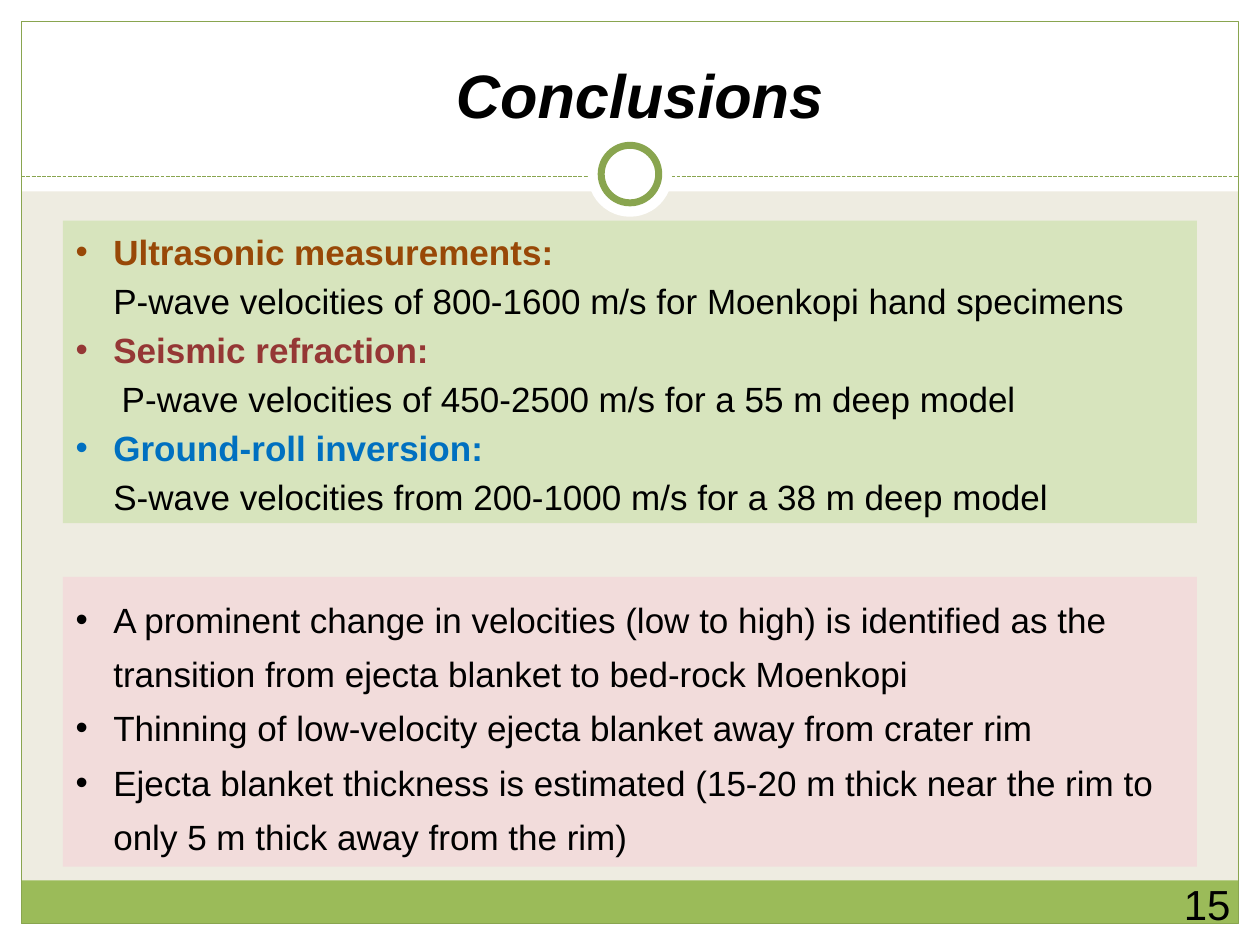
from dataclasses import dataclass
from typing import Optional

from lxml.etree import SubElement
from pptx import Presentation
from pptx.dml.color import RGBColor
from pptx.enum.dml import MSO_LINE_DASH_STYLE as Dash
from pptx.enum.shapes import MSO_CONNECTOR, MSO_SHAPE
from pptx.enum.text import MSO_ANCHOR, MSO_AUTO_SIZE, PP_ALIGN
from pptx.oxml.ns import qn
from pptx.util import Cm, Pt

BLACK = RGBColor(0x00, 0x00, 0x00)
WHITE = RGBColor(0xFF, 0xFF, 0xFF)
CREAM = RGBColor(0xEE, 0xEC, 0xE1)
GREEN = RGBColor(0x9B, 0xBB, 0x59)
DARK_GREEN = RGBColor(0x89, 0xA5, 0x4F)
PALE_GREEN = RGBColor(0xD7, 0xE4, 0xBD)
PALE_PINK = RGBColor(0xF2, 0xDC, 0xDB)
BROWN = RGBColor(0x98, 0x48, 0x07)
RED = RGBColor(0x95, 0x37, 0x35)
BLUE = RGBColor(0x00, 0x70, 0xC0)

WIDTH, HEIGHT = 25.4, 19.05
MARGIN = 0.43
INNER_WIDTH = WIDTH - 2 * MARGIN
CENTER = WIDTH / 2
TWO_CONTENT = 3
RECT, OVAL = MSO_SHAPE.RECTANGLE, MSO_SHAPE.OVAL


@dataclass(frozen=True)
class Box:
    left: float
    top: float
    width: float
    height: float


@dataclass(frozen=True)
class Block:
    box: Box
    kind: MSO_SHAPE = RECT
    fill: Optional[RGBColor] = None
    line: Optional[RGBColor] = None
    weight: float = 0.75


@dataclass(frozen=True)
class Line:
    text: str
    bulleted: bool = False
    heading_color: Optional[RGBColor] = None
    indent: float = 0.76


@dataclass(frozen=True)
class Panel:
    background: Block
    text_box: Box
    space_after: float
    lines: tuple[Line, ...]


FRAME = (
    Block(Box(0, HEIGHT - MARGIN, WIDTH, MARGIN), fill=WHITE),
    Block(Box(0, 0, WIDTH, 3.86), fill=WHITE),
    Block(Box(0, 0, MARGIN, HEIGHT), fill=WHITE),
    Block(Box(WIDTH - MARGIN, 0, MARGIN, HEIGHT), fill=WHITE),
    Block(Box(MARGIN, 17.75, INNER_WIDTH, 0.87), fill=GREEN),
    Block(Box(MARGIN, MARGIN, INNER_WIDTH, HEIGHT - 2 * MARGIN), line=DARK_GREEN),
)
RING = (
    Block(Box(CENTER - 0.85, 2.67, 1.7, 1.7), OVAL, WHITE),
    Block(Box(CENTER - 0.58, 2.93, 1.16, 1.16), OVAL, WHITE, DARK_GREEN, 4),
)
PANELS = (
    Panel(
        Block(Box(1.27, 4.45, 22.86, 6.1), fill=PALE_GREEN),
        Box(1.27, 4.45, 22.02, 5.92),
        4,
        (
            Line("Ultrasonic measurements:", True, BROWN),
            Line("P-wave velocities of 800-1600 m/s for Moenkopi hand specimens"),
            Line("Seismic refraction:", True, RED),
            Line("P-wave velocities of 450-2500 m/s for a 55 m deep model", indent=0.93),
            Line("Ground-roll inversion:", True, BLUE),
            Line("S-wave velocities from 200-1000 m/s for a 38 m deep model"),
        ),
    ),
    Panel(
        Block(Box(1.27, 11.63, 22.86, 5.84), fill=PALE_PINK),
        Box(1.27, 11.86, 22.66, 6.38),
        7,
        (
            Line("A prominent change in velocities (low to high) is identified as the", True),
            Line("transition from ejecta blanket to bed-rock Moenkopi"),
            Line("Thinning of low-velocity ejecta blanket away from crater rim", True),
            Line("Ejecta blanket thickness is estimated (15-20 m thick near the rim to", True),
            Line("only 5 m thick away from the rim)"),
        ),
    ),
)


def lengths(box: Box) -> tuple[Cm, ...]:
    return tuple(Cm(value) for value in (box.left, box.top, box.width, box.height))


def place(shape, box: Box) -> None:
    shape.left, shape.top, shape.width, shape.height = lengths(box)


def set_all(target, formats: dict) -> None:
    for name, value in formats.items():
        setattr(target, name, value)


def format_font(font, size: float, color: RGBColor = BLACK, **styles: bool) -> None:
    set_all(font, {"name": "Arial", "size": Pt(size), **styles})
    font.color.rgb = color


def draw_block(slide, block: Block) -> None:
    shape = slide.shapes.add_shape(block.kind, *lengths(block.box))
    shape.shadow.inherit = False
    if block.fill is None:
        shape.fill.background()
    else:
        shape.fill.solid()
        shape.fill.fore_color.rgb = block.fill
    if block.line is None:
        shape.line.fill.background()
    else:
        shape.line.color.rgb = block.line
        shape.line.width = Pt(block.weight)


def draw_divider(slide) -> None:
    y = Cm(3.56)
    divider = slide.shapes.add_connector(
        MSO_CONNECTOR.STRAIGHT, Cm(MARGIN), y, Cm(WIDTH - MARGIN), y)
    set_all(divider.line, {"width": Pt(0.75), "dash_style": Dash.SQUARE_DOT})
    divider.line.color.rgb = DARK_GREEN
    SubElement(divider.element.spPr, qn("a:effectLst"))


def set_bullet(paragraph, line: Line) -> None:
    properties = paragraph._p.get_or_add_pPr()
    properties.set("marL", str(Cm(line.indent)))
    properties.set("indent", str(-Cm(line.indent) if line.bulleted else 0))
    if line.bulleted:
        SubElement(properties, qn("a:buFont"), typeface="Arial")
        SubElement(properties, qn("a:buChar"), char="•")
    else:
        SubElement(properties, qn("a:buNone"))


def bring_to_front(slide, shape) -> None:
    slide.shapes.element.append(shape.element)


def draw_panel(slide, placeholder, panel: Panel) -> None:
    draw_block(slide, panel.background)
    bring_to_front(slide, placeholder)
    place(placeholder, panel.text_box)
    frame = placeholder.text_frame
    set_all(frame, {"word_wrap": True, "auto_size": MSO_AUTO_SIZE.NONE,
                    "vertical_anchor": MSO_ANCHOR.TOP, "margin_top": Cm(0.2)})
    for index, line in enumerate(panel.lines):
        paragraph = frame.add_paragraph() if index else frame.paragraphs[0]
        set_bullet(paragraph, line)
        set_all(paragraph, {"space_before": Pt(0), "space_after": Pt(panel.space_after),
                            "alignment": PP_ALIGN.LEFT})
        run = paragraph.add_run()
        run.text = line.text
        format_font(run.font, 20, line.heading_color or BLACK,
                    bold=line.heading_color is not None)


def draw_title(slide) -> None:
    title = slide.shapes.title
    bring_to_front(slide, title)
    place(title, Box(0.2, -0.2, WIDTH, 2.97))
    title.text_frame.text = "Conclusions"
    set_all(title.text_frame, {"auto_size": MSO_AUTO_SIZE.NONE,
                               "vertical_anchor": MSO_ANCHOR.BOTTOM})
    paragraph = title.text_frame.paragraphs[0]
    paragraph.alignment = PP_ALIGN.CENTER
    format_font(paragraph.runs[0].font, 35, bold=True, italic=True)


def draw_page_number(slide) -> None:
    frame = slide.shapes.add_textbox(*lengths(Box(23.7, 17.6, 1.27, 1.22))).text_frame
    sides = ("left", "top", "right", "bottom")
    set_all(frame, {f"margin_{side}": Cm(0.12) for side in sides})
    set_all(frame, {"text": "15", "word_wrap": True, "vertical_anchor": MSO_ANCHOR.MIDDLE})
    paragraph = frame.paragraphs[0]
    paragraph.alignment = PP_ALIGN.CENTER
    format_font(paragraph.runs[0].font, 24)


def main() -> None:
    presentation = Presentation()
    set_all(presentation, {"slide_width": Cm(WIDTH), "slide_height": Cm(HEIGHT)})
    slide = presentation.slides.add_slide(presentation.slide_layouts[TWO_CONTENT])
    slide.background.fill.solid()
    slide.background.fill.fore_color.rgb = CREAM
    bodies = [slide.placeholders[1], slide.placeholders[2]]

    for block in FRAME:
        draw_block(slide, block)
    draw_divider(slide)
    for block in RING:
        draw_block(slide, block)
    draw_title(slide)
    draw_page_number(slide)
    for body, panel in zip(bodies, PANELS):
        draw_panel(slide, body, panel)
    presentation.save("out.pptx")


if __name__ == "__main__":
    main()
